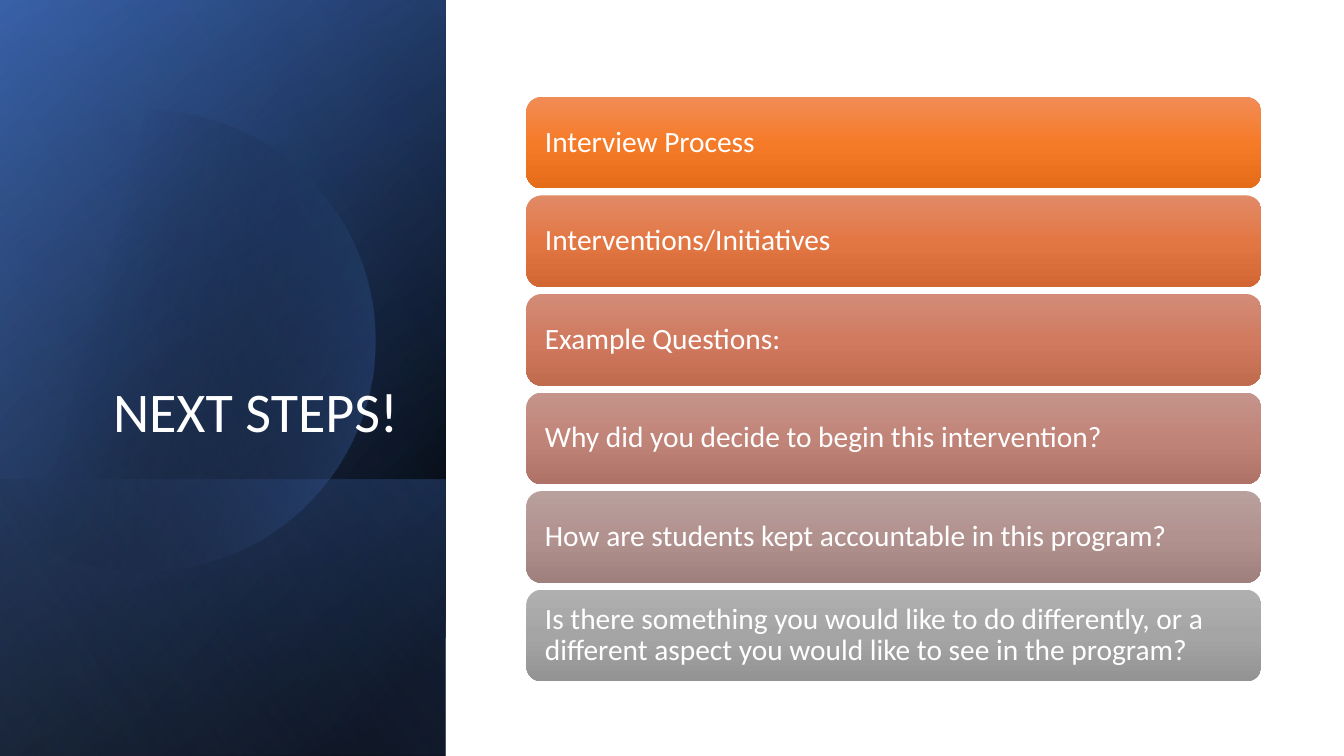
from math import cos, radians, sin

from pptx import Presentation
from pptx.dml.color import RGBColor
from pptx.enum.shapes import MSO_SHAPE
from pptx.enum.text import MSO_ANCHOR, MSO_AUTO_SIZE, PP_ALIGN
from pptx.oxml import parse_xml
from pptx.oxml.ns import nsdecls, qn
from pptx.util import Inches, Pt

STEPS = [
    ("Interview Process", ("F18C57", "F67B28", "E56C19")),
    ("Interventions/Initiatives\u00a0", ("E18A66", "E37744", "D26734")),
    ("Example Questions:", ("D28C78", "D17A5F", "C06A4E")),
    ("Why did you decide to begin this intervention?", ("C5948B", "C18478", "AF7267")),
    ("How are students kept accountable in this program?", ("B9A09D", "B2928F", "A0807D")),
    ("Is there something you would like to do differently, or a different aspect "
     "you would like to see in the program?", ("AFAFAF", "A5A5A5", "939393")),
]


def colour(value):
    return RGBColor.from_string(value)


def write(frame, text, size=21, tint="FFFFFF", font="Calibri",
          align=PP_ALIGN.LEFT, anchor=MSO_ANCHOR.MIDDLE):
    frame.word_wrap = True
    frame.auto_size = MSO_AUTO_SIZE.NONE
    frame.vertical_anchor = anchor
    para = frame.paragraphs[0]
    para.alignment = align
    para.line_spacing = 0.9
    span = para.add_run()
    span.text = text
    span.font.size = Pt(size)
    span.font.name = font
    span.font.color.rgb = colour(tint)


class SlideBuilder:
    def __init__(self, deck):
        self.page = deck.slides.add_slide(deck.slide_layouts[5])
        self.page.background.fill.solid()
        self.page.background.fill.fore_color.rgb = colour("FFFFFF")

    def paint(self, shape, stops, angle):
        shape.shadow.inherit = False
        shape.line.fill.background()
        shape.fill.background()
        marks = "".join(
            f'<a:gs pos="{place * 1000}"><a:srgbClr val="{colour(tint)}">'
            f'<a:alpha val="{opacity * 1000}"/></a:srgbClr></a:gs>'
            for place, tint, opacity in stops)
        gradient = parse_xml(
            f'<a:gradFill {nsdecls("a")} rotWithShape="1"><a:gsLst>{marks}</a:gsLst>'
            f'<a:lin ang="{angle * 60000}" scaled="0"/></a:gradFill>')
        properties = shape._element.spPr
        properties.replace(properties.find(qn("a:noFill")), gradient)

    def panel(self, left, top, width, height, stops, angle):
        box = self.page.shapes.add_shape(
            MSO_SHAPE.RECTANGLE, Inches(left), Inches(top), Inches(width), Inches(height))
        box.rotation = 90
        box._element.spPr.xfrm.set("flipH", "1")
        self.paint(box, stops, angle)

    def disc(self, centre_x, centre_y, radius, sweep, stops, angle):
        points = [(Inches(centre_x + radius * cos(radians(turn))),
                   Inches(centre_y + radius * sin(radians(turn))))
                  for turn in range(-sweep, sweep + 1, 2)]
        outline = self.page.shapes.build_freeform(*points[0])
        outline.add_line_segments(points[1:], close=True)
        self.paint(outline.convert_to_shape(), stops, angle)

    def title(self, text, left, top, width, height):
        box = self.page.shapes.title
        box.left, box.top = Inches(left), Inches(top)
        box.width, box.height = Inches(width), Inches(height)
        write(box.text_frame, text, size=40, align=PP_ALIGN.RIGHT, anchor=MSO_ANCHOR.BOTTOM)
        self.page.shapes._spTree.append(box._element)

    def card(self, text, tints, left, top, width, height):
        box = self.page.shapes.add_shape(
            MSO_SHAPE.ROUNDED_RECTANGLE,
            Inches(left), Inches(top), Inches(width), Inches(height))
        self.paint(box, [(place, tint, 100) for place, tint in zip((0, 50, 100), tints)], 90)
        frame = box.text_frame
        frame.margin_left = frame.margin_right = Inches(0.14)
        write(frame, text)


def main():
    deck = Presentation()
    deck.slide_width, deck.slide_height = Inches(13.33), Inches(7.5)
    slide = SlideBuilder(deck)

    side = (-1.54, 1.54, 7.5, 4.42)
    slide.panel(*side, [(8, "000000", 100), (100, "2F5597", 100)], 50)
    slide.panel(*side, [(0, "000000", 0), (99, "4472C4", 46)], 30)
    slide.panel(0.84, 3.92, 2.74, 4.42, [(2, "4472C4", 29), (100, "000000", 30)], 130)
    slide.disc(1.43, 3.38, 2.29, 128, [(29, "000000", 0), (100, "4472C4", 43)], 14)
    slide.panel(*side, [(0, "000000", 0), (99, "8FAADC", 11)], 120)
    slide.title("NEXT STEPS!", 0.64, 1.84, 3.41, 2.62)

    first_top, last_top = 0.96, 5.85
    pitch = (last_top - first_top) / (len(STEPS) - 1)
    for index, (text, tints) in enumerate(STEPS):
        slide.card(text, tints, 5.22, first_top + index * pitch, 7.29, 0.91)

    deck.save("out.pptx")


if __name__ == "__main__":
    main()
